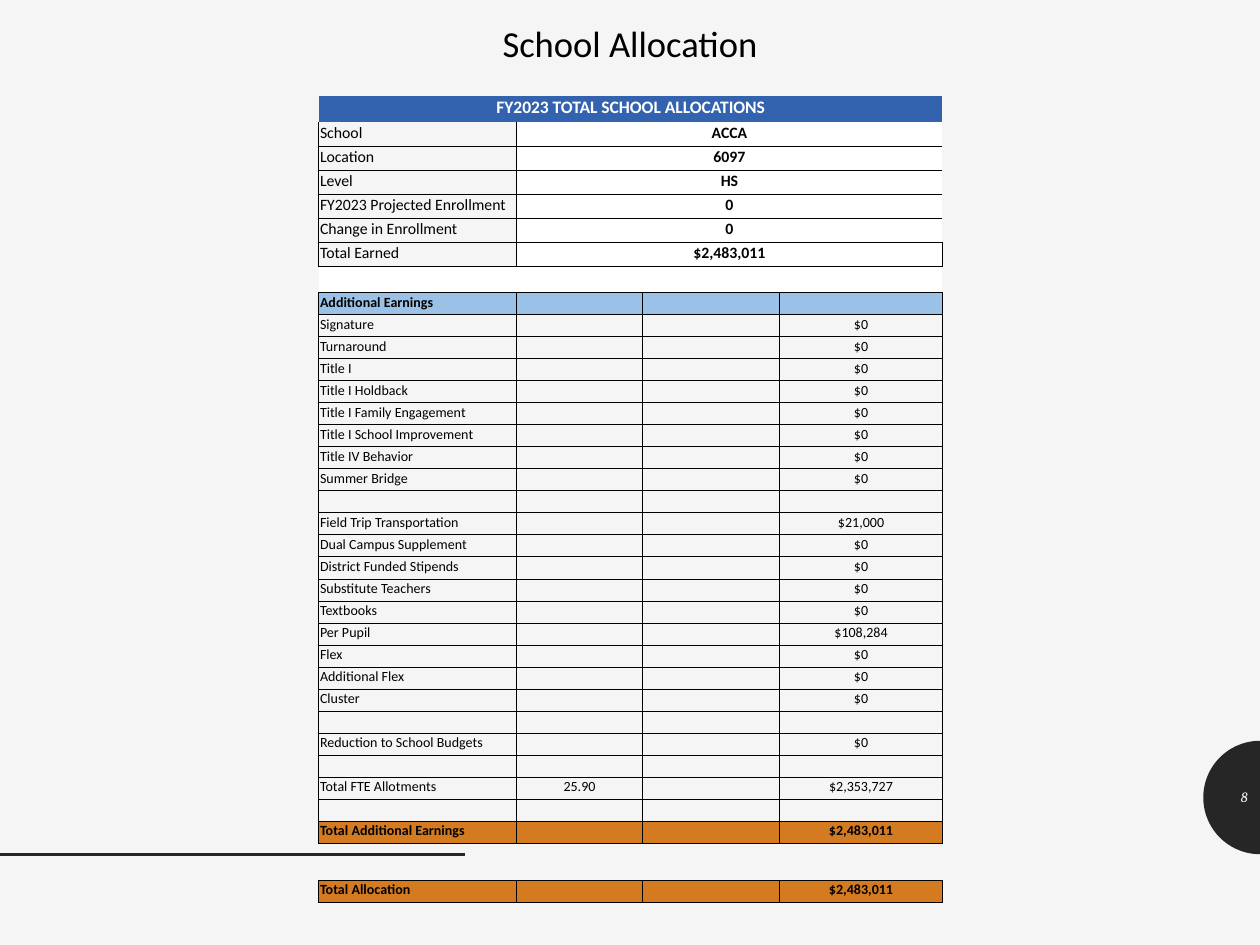
from math import cos, pi, sin

from lxml.etree import SubElement
from pptx import Presentation
from pptx.dml.color import RGBColor
from pptx.enum.shapes import MSO_CONNECTOR as Conn
from pptx.enum.text import MSO_ANCHOR as Anchor, PP_ALIGN as Align
from pptx.oxml.ns import qn
from pptx.util import Inches, Pt

WIDTH, HEIGHT = Inches(10), Inches(7.5)

PAPER = RGBColor(0xF5, 0xF5, 0xF5)
DARK = RGBColor(0x26, 0x26, 0x26)
BLACK = RGBColor(0, 0, 0)
WHITE = RGBColor(0xFF, 0xFF, 0xFF)
BLUE = RGBColor(0x33, 0x62, 0xAE)
SKY = RGBColor(0x9B, 0xC2, 0xE6)
ORANGE = RGBColor(0xD4, 0x7B, 0x22)

COLUMNS = [1.57, 1, 1.09, 1.29]  # inches

# School facts: label, value, sides of the value cell that are ruled
FACTS = [
    ("School", "ACCA", "LB"),
    ("Location", "6097", "LTB"),
    ("Level", "HS", "LTB"),
    ("FY2023 Projected Enrollment", "0", "LTB"),
    ("Change in Enrollment", "0", "LTB"),
    ("Total Earned", "$2,483,011", "LRTB"),
]

# Earnings: label, positions, amount; an empty tuple is an empty row
EARNINGS = [
    ("Signature", "", "$0"),
    ("Turnaround", "", "$0"),
    ("Title I", "", "$0"),
    ("Title I Holdback", "", "$0"),
    ("Title I Family Engagement", "", "$0"),
    ("Title I School Improvement", "", "$0"),
    ("Title IV Behavior", "", "$0"),
    ("Summer Bridge", "", "$0"),
    (),
    ("Field Trip Transportation", "", "$21,000"),
    ("Dual Campus Supplement", "", "$0"),
    ("District Funded Stipends", "", "$0"),
    ("Substitute Teachers", "", "$0"),
    ("Textbooks", "", "$0"),
    ("Per Pupil", "", "$108,284"),
    ("Flex", "", "$0"),
    ("Additional Flex", "", "$0"),
    ("Cluster", "", "$0"),
    (),
    ("Reduction to School Budgets", "", "$0"),
    (),
    ("Total FTE Allotments", "25.90", "$2,353,727"),
    (),
]


def set_all(obj, values):
    for name, value in values.items():
        setattr(obj, name, value)


def write(p, text, align, color=BLACK, **font):
    p.alignment = align
    if not text:
        p._p.get_or_add_endParaRPr().set("sz", str(font["size"].centipoints))
        return
    r = p.add_run()
    r.text = text
    set_all(r.font, {"name": "Calibri", **font})
    r.font.color.rgb = color


def add_text(s, box, text, align, spacing=None, **style):
    left, top, width, height = box
    sp = s.shapes.add_textbox(int(left * WIDTH), int(top * HEIGHT),
                              int(width * WIDTH), int(height * HEIGHT))
    tf = sp.text_frame
    set_all(tf, {"word_wrap": True, "vertical_anchor": Anchor.MIDDLE})
    p = tf.paragraphs[0]
    p.line_spacing = spacing
    write(p, text, align, **style)


def add_half_disc(s, cy, radius, steps=48):
    """Disc centred on the right edge; only its left half is on the slide."""
    points = [(WIDTH - radius * sin(pi * i / steps), cy - radius * cos(pi * i / steps))
              for i in range(steps + 1)]
    fb = s.shapes.build_freeform(int(points[0][0]), int(points[0][1]))
    fb.add_line_segments([(int(x), int(y)) for x, y in points[1:]], close=True)
    sp = fb.convert_to_shape()
    sp.shadow.inherit = False
    sp.fill.solid()
    sp.fill.fore_color.rgb = DARK
    sp.line.fill.background()


def add_rule(s, y, length):
    line = s.shapes.add_connector(Conn.STRAIGHT, 0, y, length, y)
    line.line.color.rgb = DARK
    line.line.width = Pt(2)
    SubElement(line._element.spPr, qn("a:effectLst"))


def set_borders(cell, sides):
    tc_pr = cell._tc.get_or_add_tcPr()
    for side in "LRTB":
        ln = SubElement(tc_pr, qn(f"a:ln{side}"), w=str(Pt(0.5)))
        if side in sides:
            fill = SubElement(ln, qn("a:solidFill"))
            SubElement(fill, qn("a:srgbClr"), val=str(BLACK))
        else:
            SubElement(ln, qn("a:noFill"))


def fill_cell(cell, text="", fill=None, sides="LRTB", align=Align.CENTER, **style):
    set_borders(cell, sides)
    if fill is None:
        cell.fill.background()
    else:
        cell.fill.solid()
        cell.fill.fore_color.rgb = fill
    edge = Inches(0.01)
    set_all(cell, {"margin_left": edge, "margin_right": edge, "margin_top": edge,
                   "margin_bottom": Inches(0.03), "vertical_anchor": Anchor.BOTTOM})
    write(cell.text_frame.paragraphs[0], text, align, **style)


def fill_merged(table, row, first, text, sides, **style):
    last = len(COLUMNS) - 1
    table.cell(row, first).merge(table.cell(row, last))
    fill_cell(table.cell(row, first), text, sides=sides, **style)
    for col in range(first + 1, last + 1):
        outer = sides.replace("L", "")
        inner = outer if col == last else outer.replace("R", "")
        fill_cell(table.cell(row, col), sides=inner, **style)


def fill_row(table, row, values=(), size=8, **style):
    label, count, amount = values or ("", "", "")
    for col, text in enumerate([label, count, "", amount]):
        align = Align.CENTER if col else Align.LEFT
        fill_cell(table.cell(row, col), text, align=align, size=Pt(size), **style)


def add_allocation_table(s):
    # Each entry after the facts: height in points, values, format
    total = {"fill": ORANGE, "bold": True}
    rows = [(15, (), {"fill": WHITE, "sides": "TB"}),
            (12.6, ("Additional Earnings", "", ""), {"fill": SKY, "bold": True})]
    rows += [(12.6, values, {"bold": False}) for values in EARNINGS]
    rows += [(12.6, ("Total Additional Earnings", "", "$2,483,011"), total),
             (10.5, (), {"sides": "T", "size": 6}),
             (10.5, (), {"sides": "B", "size": 6}),
             (12.6, ("Total Allocation", "", "$2,483,011"), total)]
    heights = [15] + [13.75] * len(FACTS) + [height for height, _, _ in rows]

    frame = s.shapes.add_table(len(heights), len(COLUMNS), Inches(2.53), Inches(0.76),
                               Inches(sum(COLUMNS)), Pt(sum(heights)))
    table = frame.table
    set_all(table, {"first_row": False, "horz_banding": False})
    for column, width in zip(table.columns, COLUMNS):
        column.width = Inches(width)
    for row, height in zip(table.rows, heights):
        row.height = Pt(height)

    # Heading and school facts
    fill_merged(table, 0, 0, "FY2023 TOTAL SCHOOL ALLOCATIONS", "",
                fill=BLUE, color=WHITE, size=Pt(10), bold=True)
    for i, (label, value, sides) in enumerate(FACTS, 1):
        fill_cell(table.cell(i, 0), label, align=Align.LEFT, size=Pt(9), bold=False,
                  sides="LRB" if i == 1 else "LRTB")
        fill_merged(table, i, 1, value, sides, fill=WHITE, size=Pt(9), bold=True)

    # Earnings and totals
    for i, (_, values, style) in enumerate(rows, len(FACTS) + 1):
        fill_row(table, i, values, **style)


def main():
    prs = Presentation()
    set_all(prs, {"slide_width": WIDTH, "slide_height": HEIGHT})
    s = prs.slides.add_slide(prs.slide_layouts[6])
    s.background.fill.solid()
    s.background.fill.fore_color.rgb = PAPER

    # Page decoration and number
    add_half_disc(s, Inches(6.33), Inches(0.45))
    add_rule(s, Inches(6.78), Inches(3.69))
    add_text(s, (0.955, 0.817, 0.045, 0.053), "8", Align.RIGHT,
             name="Cambria", size=Pt(8.2), italic=True, color=PAPER)

    # Title and table
    add_text(s, (0.05, 0.021, 0.9, 0.057), "School Allocation", Align.CENTER,
             spacing=0.8, size=Pt(20.9))
    add_allocation_table(s)
    prs.save("out.pptx")


if __name__ == "__main__":
    main()
